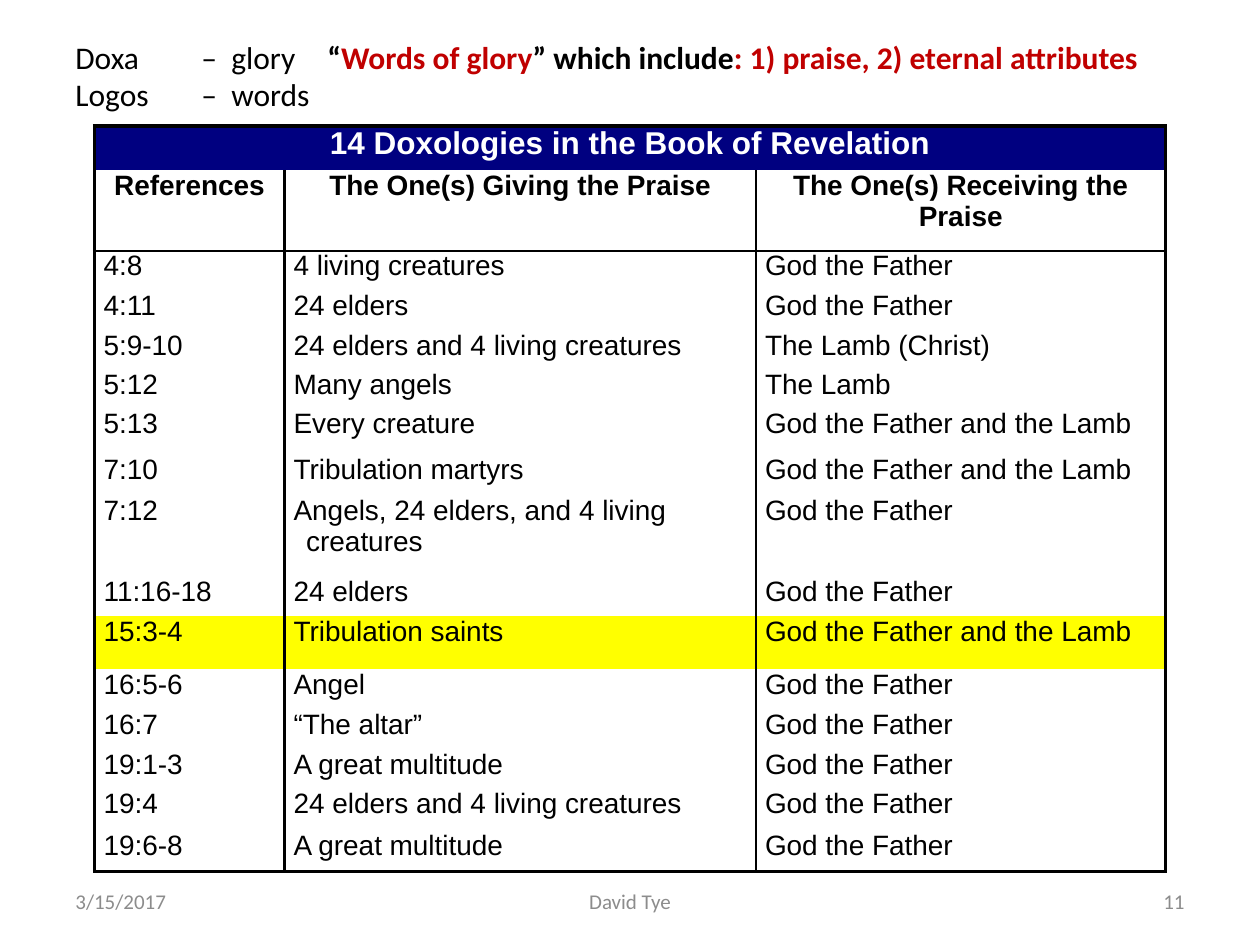
from lxml.etree import SubElement
from pptx import Presentation
from pptx.dml.color import RGBColor
from pptx.enum.text import MSO_ANCHOR, PP_ALIGN
from pptx.oxml.ns import qn
from pptx.util import Pt

BLACK = RGBColor(0x00, 0x00, 0x00)
WHITE = RGBColor(0xFF, 0xFF, 0xFF)
NAVY = RGBColor(0x00, 0x00, 0x80)
YELLOW = RGBColor(0xFF, 0xFF, 0x00)
RED = RGBColor(0xC0, 0x00, 0x00)
GRAY = RGBColor(0x8C, 0x8C, 0x8C)

# Content: (text, colour, bold) runs for each line of the definition
DEFINITION = [
    [("Doxa \t–  glory\t", BLACK, False), ("“", BLACK, True),
     ("Words of glory", RED, True), ("” which include", BLACK, True),
     (": 1) praise, 2) eternal attributes", RED, True)],
    [("Logos \t–  words", BLACK, False)],
]
TITLE = "14 Doxologies in the Book of Revelation"
HEADINGS = ("References", "The One(s) Giving the Praise", "The One(s) Receiving the Praise")
FATHER = "God the Father"
BOTH = "God the Father and the Lamb"
DOXOLOGIES = [
    ("4:8", "4 living creatures", FATHER),
    ("4:11", "24 elders", FATHER),
    ("5:9-10", "24 elders and 4 living creatures", "The Lamb (Christ)"),
    ("5:12", "Many angels", "The Lamb"),
    ("5:13", "Every creature", BOTH),
    ("7:10", "Tribulation martyrs", BOTH),
    ("7:12", "Angels, 24 elders, and 4 living creatures", FATHER),
    ("11:16-18", "24 elders", FATHER),
    ("15:3-4", "Tribulation saints", BOTH),
    ("16:5-6", "Angel", FATHER),
    ("16:7", "“The altar”", FATHER),
    ("19:1-3", "A great multitude", FATHER),
    ("19:4", "24 elders and 4 living creatures", FATHER),
    ("19:6-8", "A great multitude", FATHER),
]
HIGHLIGHTED = "15:3-4"
FOOTERS = [  # text, left, width, alignment
    ("3/15/2017", 36, 168, PP_ALIGN.LEFT),
    ("David Tye", 246, 228, PP_ALIGN.CENTER),
    ("11", 516, 168, PP_ALIGN.RIGHT),
]

COLUMN_WIDTHS = (108.6, 269.4, 234)
ROW_HEIGHTS = (25.2, 46.1, 22.8, 22.8, 21.9, 22.8, 25.9, 23.8,
               45.9, 22.8, 30.5, 22.8, 22.8, 22.8, 23.8, 23.4)
OUTER, INNER = 2.25, 1.5


def style_run(run, font, size, color, bold=False):
    run.font.name, run.font.size, run.font.bold = font, Pt(size), bold
    run.font.color.rgb = color


def add_box(slide, left, top, width, height):
    frame = slide.shapes.add_textbox(Pt(left), Pt(top), Pt(width), Pt(height)).text_frame
    frame.word_wrap = True
    return frame


def set_borders(cell, **widths):
    """Draw the given sides (L, R, T, B) and clear the others."""
    properties = cell._tc.get_or_add_tcPr()
    for side in "LRTB":
        line = SubElement(properties, qn(f"a:ln{side}"))
        width = widths.get(side)
        if width:
            line.set("w", str(Pt(width)))
            fill = SubElement(line, qn("a:solidFill"))
            SubElement(fill, qn("a:srgbClr")).set("val", str(BLACK))
        else:
            SubElement(line, qn("a:noFill"))


def fill_cell(cell, text, size, color, bold, centered, gap, background):
    cell.margin_left = cell.margin_right = Pt(5.2)
    cell.margin_top = cell.margin_bottom = 0
    if background is None:
        cell.fill.background()
    else:
        cell.fill.solid()
        cell.fill.fore_color.rgb = background
    cell.text_frame.text = text
    paragraph = cell.text_frame.paragraphs[0]
    paragraph.space_before = paragraph.space_after = Pt(gap)
    if centered:
        paragraph.alignment = PP_ALIGN.CENTER
    else:
        indent = paragraph._p.get_or_add_pPr()
        indent.set("marL", str(Pt(7.2)))
        indent.set("indent", str(-Pt(7.2)))
    for run in paragraph.runs:
        style_run(run, "Arial", size, color, bold)


prs = Presentation()
prs.slide_width, prs.slide_height = Pt(720), Pt(540)
slide = prs.slides.add_slide(prs.slide_layouts[6])

# Footer
for text, left, width, alignment in FOOTERS:
    footer = add_box(slide, left, 500.5, width, 28.75)
    footer.vertical_anchor = MSO_ANCHOR.MIDDLE
    footer.text = text
    footer.paragraphs[0].alignment = alignment
    style_run(footer.paragraphs[0].runs[0], "Calibri", 12, GRAY)

# Table of doxologies
rows = [(TITLE, "", ""), HEADINGS, *DOXOLOGIES]
table = slide.shapes.add_table(len(rows), len(HEADINGS), Pt(54), Pt(72),
                               Pt(sum(COLUMN_WIDTHS)), Pt(sum(ROW_HEIGHTS))).table
table.first_row = table.horz_banding = False
for column, width in zip(table.columns, COLUMN_WIDTHS):
    column.width = Pt(width)
for row, height in zip(table.rows, ROW_HEIGHTS):
    row.height = Pt(height)
table.cell(0, 0).merge(table.cell(0, 2))

last_row, last_column = len(rows) - 1, len(HEADINGS) - 1
for r, row in enumerate(rows):
    for c, text in enumerate(row):
        cell = table.cell(r, c)
        inner = INNER if r else None
        set_borders(cell,
                    L=inner if c else OUTER,
                    R=OUTER if c == last_column or r == 0 else inner,
                    T={0: OUTER, 2: INNER}.get(r),
                    B={1: INNER, last_row: OUTER}.get(r))
        if r == 0:
            fill_cell(cell, text, 18, WHITE, True, True, 6, NAVY)
        elif r == 1:
            fill_cell(cell, text, 16, BLACK, True, True, 6, None)
        else:
            background = YELLOW if row[0] == HIGHLIGHTED else None
            fill_cell(cell, text, 16, BLACK, False, False, 3, background)

# Definition of the word
definition = add_box(slide, 36, 18, 624, 50.9)
for i, line in enumerate(DEFINITION):
    paragraph = definition.add_paragraph() if i else definition.paragraphs[0]
    for text, color, bold in line:
        run = paragraph.add_run()
        run.text = text
        style_run(run, "Calibri", 18, color, bold)

prs.save("out.pptx")
